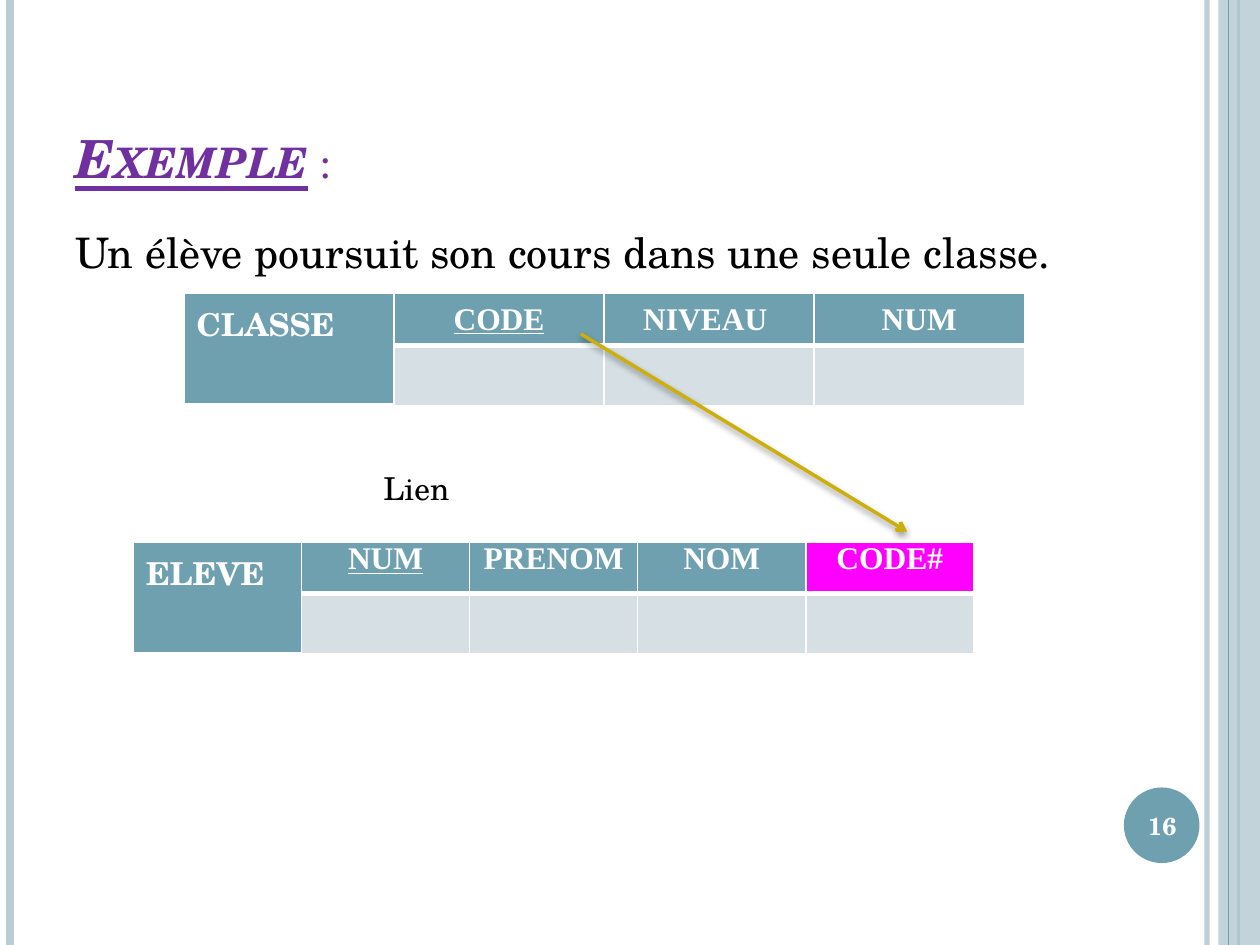
from pptx import Presentation
from pptx.dml.color import RGBColor
from pptx.enum.shapes import MSO_CONNECTOR as Connector, MSO_SHAPE as Shape
from pptx.enum.text import MSO_ANCHOR as Anchor, PP_ALIGN as Align
from pptx.oxml.ns import qn
from pptx.util import Inches, Pt
from lxml.etree import SubElement

COLORS = {
    "pale": "BACDD4", "teal": "6EA0B0", "purple": "7030A0", "black": "000000",
    "white": "FFFFFF", "cell": "D5DFE4", "key": "FF00FF", "gold": "CCAF0A",
}
SERIF = "TeX Gyre Schola"
HEADER = "Times New Roman"


def rgb(name):
    return RGBColor.from_string(COLORS[name])


def set_alpha(fill_parent, percent):
    color = fill_parent.find(".//" + qn("a:srgbClr"))
    SubElement(color, qn("a:alpha"), val=str(percent * 1000))


def add_span(para, text, color, size=18, name=SERIF, caps=None, **formats):
    span = para.add_run()
    span.text = text
    span.font.color.rgb = rgb(color)
    for key, value in {"size": Pt(size), "name": name, **formats}.items():
        setattr(span.font, key, value)
    if caps:
        span.font._element.set("cap", caps)


def add_text(page, bounds, spans, align=Align.LEFT, anchor=Anchor.TOP, before=0):
    box = page.shapes.add_textbox(*map(Inches, bounds))
    frame = box.text_frame
    frame.word_wrap = True
    frame.vertical_anchor = anchor
    para = frame.paragraphs[0]
    para.alignment = align
    para.space_before = Pt(before)
    for text, formats in spans:
        add_span(para, text, **formats)


def add_line(page, start, end, color, width):
    line = page.shapes.add_connector(Connector.STRAIGHT, *map(Inches, start + end))
    line.line.color.rgb = rgb(color)
    line.line.width = Pt(width)
    effects = SubElement(line._element.spPr, qn("a:effectLst"))
    return line, effects


def add_rule(page, x, color, width):
    return add_line(page, (x, 0), (x, 7.5), color, width)[0]


def add_shape(page, kind, bounds, color):
    shape = page.shapes.add_shape(kind, *map(Inches, bounds))
    shape.shadow.inherit = False
    shape.fill.solid()
    shape.fill.fore_color.rgb = rgb(color)
    shape.line.fill.background()
    return shape


def add_arrow(page, start, end):
    arrow, effects = add_line(page, start, end, "gold", 2)
    SubElement(arrow.line._get_or_add_ln(), qn("a:tailEnd"), type="arrow")
    shadow = SubElement(effects, qn("a:outerShdw"), blurRad=str(Pt(4)),
                        dist=str(Pt(2)), dir="5400000", rotWithShape="0")
    SubElement(shadow, qn("a:srgbClr"), val=COLORS["black"])
    set_alpha(effects, 40)


def style_cell(cell, color, bottom):
    cell.fill.solid()
    cell.fill.fore_color.rgb = rgb(color)
    props = cell._tc.get_or_add_tcPr()
    for index, (side, width) in enumerate(zip("LRTB", (1, 1, 1, bottom))):
        border = SubElement(props, qn(f"a:ln{side}"), w=str(Pt(width)))
        fill = SubElement(border, qn("a:solidFill"))
        SubElement(fill, qn("a:srgbClr"), val=COLORS["white"])
        props.insert(index, border)


def add_relation(page, left, top, name, fields, anchor, foreign=None):
    count = len(fields) + 1
    table = page.shapes.add_table(2, count, Inches(left), Inches(top),
                                  Inches(6.67), Inches(0.89)).table
    table.first_row = table.horz_banding = False
    for row, height in zip(table.rows, (0.41, 0.48)):
        row.height = Inches(height)
    for column in table.columns:
        column.width = Inches(6.67 / count)
    title = table.cell(0, 0)
    title.merge(table.cell(1, 0))
    for row in range(2):
        style_cell(table.cell(row, 0), "teal", 3)
    add_span(title.text_frame.paragraphs[0], name, "white", bold=True)
    for index, field in enumerate(fields, 1):
        head = table.cell(0, index)
        style_cell(head, "key" if field == foreign else "teal", 3)
        style_cell(table.cell(1, index), "cell", 1)
        head.margin_left = head.margin_right = Inches(0.07)
        head.margin_top = head.margin_bottom = 0
        head.vertical_anchor = anchor
        para = head.text_frame.paragraphs[0]
        para.alignment = Align.CENTER
        add_span(para, field, "white", name=HEADER, bold=True, underline=index == 1)


def add_frame(page):
    set_alpha(add_rule(page, 9.58, "pale", 3)._element, 93)
    add_rule(page, 0.08, "pale", 4.5)
    add_rule(page, 9.83, "teal", 1.5)
    band = add_shape(page, Shape.RECTANGLE, (9.67, 0, 0.33, 7.5), "pale")
    set_alpha(band._element.spPr, 87)
    add_rule(page, 9.75, "teal", 0.75)
    add_shape(page, Shape.OVAL, (8.92, 6.25, 0.6, 0.6), "teal")


def main():
    deck = Presentation()
    deck.slide_width, deck.slide_height = Inches(10), Inches(7.5)
    page = deck.slides.add_slide(deck.slide_layouts[6])
    add_frame(page)
    heading = {"color": "purple", "size": 30, "caps": "small"}
    add_text(page, (0.5, 0.3, 8.17, 1.25), [
        ("Exemple", {**heading, "bold": True, "italic": True, "underline": True}),
        (" :", heading),
    ], anchor=Anchor.BOTTOM)
    add_text(page, (0.5, 1.75, 8.17, 5.33), [
        ("Un élève poursuit son cours dans une seule classe.",
         {"color": "black", "size": 24}),
    ], before=6)
    add_text(page, (8.89, 6.27, 0.67, 0.57),
             [("16", {"color": "white", "size": 14, "bold": True})],
             Align.CENTER, Anchor.MIDDLE)
    add_relation(page, 1.06, 4.3, "ELEVE", ["NUM", "PRENOM", "NOM", "CODE#"],
                 Anchor.TOP, foreign="CODE#")
    add_relation(page, 1.46, 2.33, "CLASSE", ["CODE", "NIVEAU ", "NUM"],
                 Anchor.MIDDLE)
    add_arrow(page, (4.61, 2.65), (7.2, 4.22))
    add_text(page, (2.48, 3.67, 1.65, 0.4), [("Lien", {"color": "black"})],
             Align.CENTER)
    deck.save("out.pptx")


if __name__ == "__main__":
    main()
